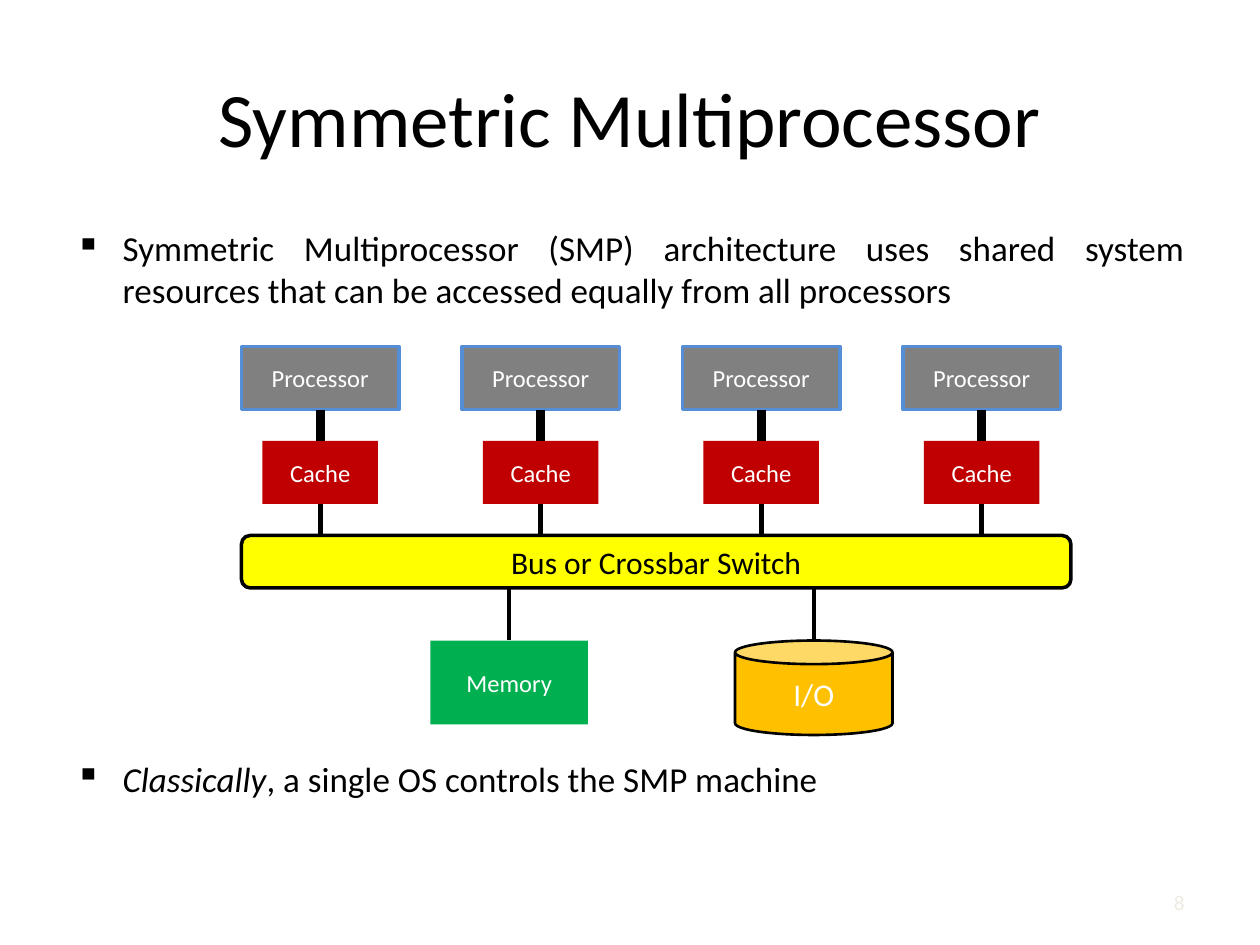
from dataclasses import dataclass
from typing import Optional

import pptx
from lxml import etree
from pptx import util as u
from pptx.dml import color
from pptx.enum import shapes, text
from pptx.oxml import ns

PX = 7620  # EMU per px, 120 px to the inch
FONT = "Calibri"
COLORS = {
    "black": "000000",
    "white": "FFFFFF",
    "processor": "808080",
    "processor_edge": "558ED5",
    "cache": "C00000",
    "memory": "00B050",
    "io": "FFC000",
    "bus": "FFFF00",
    "number": "EEECE1",
}
TOP, BOTTOM = 0, 2  # connection sites
CENTER, MIDDLE = text.PP_ALIGN.CENTER, text.MSO_ANCHOR.MIDDLE


@dataclass(frozen=True)
class Block:
    label: str
    width: int
    height: int
    fill: str
    edge: Optional[str] = None
    edge_pt: float = 0
    size: int = 14
    ink: str = "white"
    kind: shapes.MSO_SHAPE = shapes.MSO_SHAPE.RECTANGLE


PROCESSOR = Block("Processor", 150, 60, "processor", "processor_edge", 2)
CACHE = Block("Cache", 110, 60, "cache")
MEMORY = Block("Memory", 150, 80, "memory")
IO = Block("I/O", 150, 90, "io", "black", 1.5, 18,
           kind=shapes.MSO_SHAPE.CAN)
BUS = Block("Bus or Crossbar Switch", 790, 50, "bus", "black", 2, 18, "black",
            shapes.MSO_SHAPE.ROUNDED_RECTANGLE)

# Diagram grid
LEFT, PITCH, COUNT = 230, 210, 4
PROCESSOR_Y, CACHE_Y, BUS_Y, DEVICE_Y = 330, 420, 510, 610
MEMORY_X, IO_X = 410, 700


def rgb(name: str) -> color.RGBColor:
    return color.RGBColor.from_string(COLORS[name])


def set_font(para, size: int, ink: str) -> None:
    para.font.name = FONT
    para.font.size = u.Pt(size)
    para.font.color.rgb = rgb(ink)


def add_block(page, block: Block, left: int, top: int):
    box = page.shapes.add_shape(block.kind, left * PX, top * PX,
                                block.width * PX, block.height * PX)
    box.shadow.inherit = False
    box.fill.solid()
    box.fill.fore_color.rgb = rgb(block.fill)
    if block.edge:
        box.line.color.rgb = rgb(block.edge)
        box.line.width = u.Pt(block.edge_pt)
    else:
        box.line.fill.background()
    box.text_frame.vertical_anchor = MIDDLE
    para = box.text_frame.paragraphs[0]
    para.text = block.label
    para.alignment = CENTER
    set_font(para, block.size, block.ink)
    return box


def add_link(page, x: int, top: int, bottom: int, width: float,
             upper=None, lower=None) -> None:
    link = page.shapes.add_connector(shapes.MSO_CONNECTOR.STRAIGHT,
                                     x * PX, top * PX, x * PX, bottom * PX)
    link.line.color.rgb = rgb("black")
    link.line.width = u.Pt(width)
    etree.SubElement(link._element.spPr, ns.qn("a:effectLst"))
    if upper is not None:
        link.begin_connect(upper, BOTTOM)
    if lower is not None:
        link.end_connect(lower, TOP)


def add_text(page, left: int, top: int, width: int, height: int, anchor):
    frame = page.shapes.add_textbox(left * PX, top * PX,
                                    width * PX, height * PX).text_frame
    frame.word_wrap = True
    frame.vertical_anchor = anchor
    return frame


def add_line(page, words: str, area: tuple, size: int, ink: str, align) -> None:
    para = add_text(page, *area, MIDDLE).paragraphs[0]
    para.text = words
    para.alignment = align
    set_font(para, size, ink)


def style_bullet(para, before: int) -> None:
    para.alignment = text.PP_ALIGN.JUSTIFY
    para.space_before = u.Pt(before)
    set_font(para, 20, "black")
    props = para._p.get_or_add_pPr()
    props.set("marL", str(45 * PX))
    props.set("indent", str(-45 * PX))
    bullet = etree.Element(ns.qn("a:buChar"), char="▪")
    props.find(ns.qn("a:defRPr")).addprevious(bullet)


def add_bullets(page) -> None:
    frame = add_text(page, 60, 210, 1080, 630, text.MSO_ANCHOR.TOP)
    first = frame.paragraphs[0]
    first.text = ("Symmetric Multiprocessor (SMP) architecture uses shared "
                  "system resources that can be accessed equally from all "
                  "processors")
    style_bullet(first, 4)
    second = frame.add_paragraph()
    span = second.add_run()
    span.text = "Classically"
    span.font.italic = True
    second.add_run().text = ", a single OS controls the SMP machine"
    style_bullet(second, 255)  # leaves room for the diagram


def add_diagram(page) -> None:
    # Processors with their caches
    for column in range(COUNT):
        left = LEFT + column * PITCH
        center = left + PROCESSOR.width // 2
        processor = add_block(page, PROCESSOR, left, PROCESSOR_Y)
        cache = add_block(page, CACHE, center - CACHE.width // 2, CACHE_Y)
        add_link(page, center, PROCESSOR_Y + PROCESSOR.height, CACHE_Y, 5,
                 processor, cache)
        add_link(page, center, CACHE_Y + CACHE.height, BUS_Y, 3, cache)

    # Shared devices below the bus
    memory = add_block(page, MEMORY, MEMORY_X, DEVICE_Y)
    add_block(page, IO, IO_X, DEVICE_Y)
    bus_bottom = BUS_Y + BUS.height
    add_link(page, MEMORY_X + MEMORY.width // 2, bus_bottom, DEVICE_Y, 2.5,
             lower=memory)
    add_link(page, IO_X + IO.width // 2, bus_bottom, DEVICE_Y, 2.5)

    # Bus covers the link ends
    add_block(page, BUS, LEFT, BUS_Y)


def main() -> None:
    deck = pptx.Presentation()
    deck.slide_width, deck.slide_height = 1200 * PX, 900 * PX
    page = deck.slides.add_slide(deck.slide_layouts[6])
    add_line(page, "Symmetric Multiprocessor", (60, 36, 1080, 150), 44,
             "black", CENTER)
    add_bullets(page)
    add_diagram(page)
    add_line(page, "8", (860, 835, 280, 48), 12, "number",
             text.PP_ALIGN.RIGHT)
    deck.save("out.pptx")


if __name__ == "__main__":
    main()
